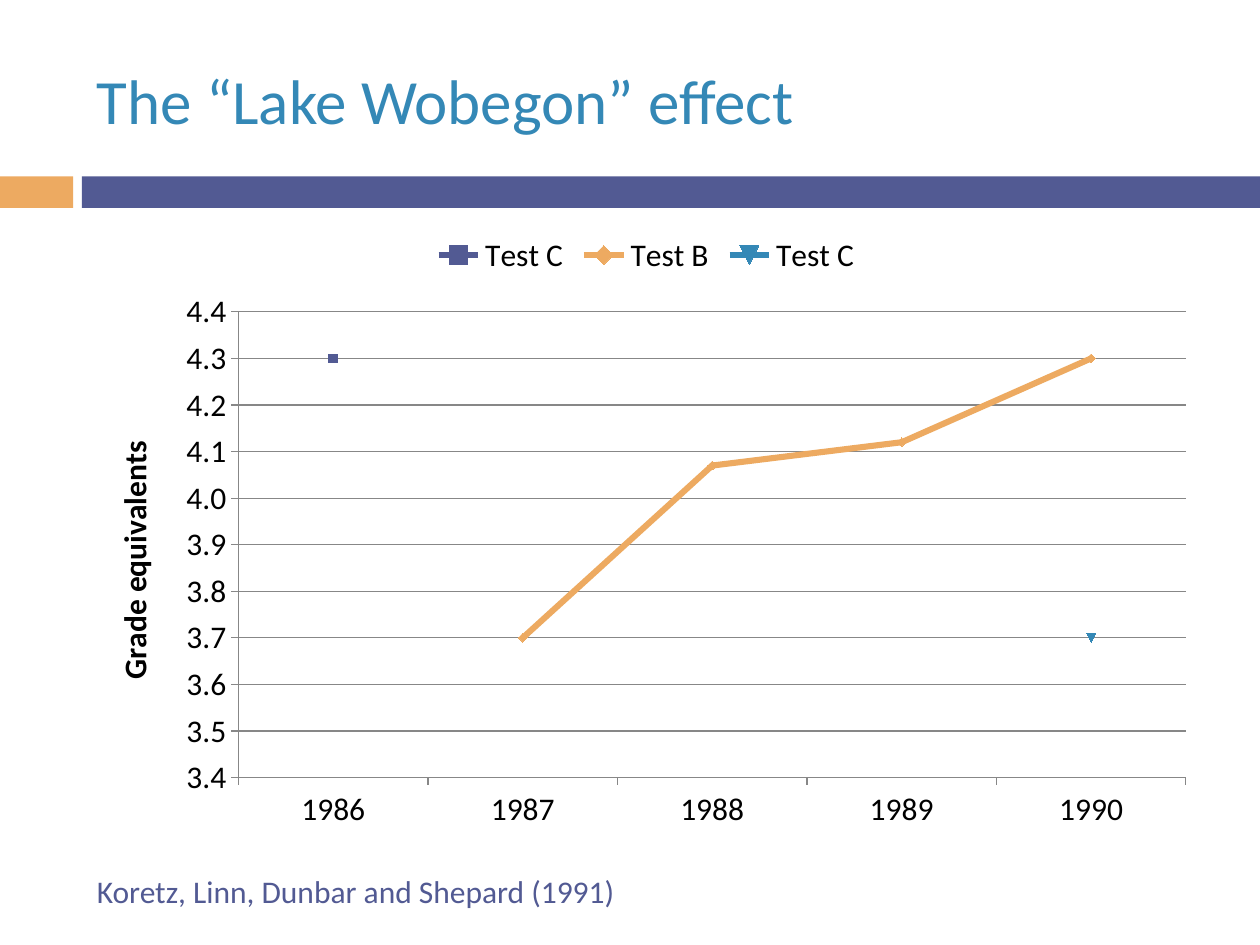
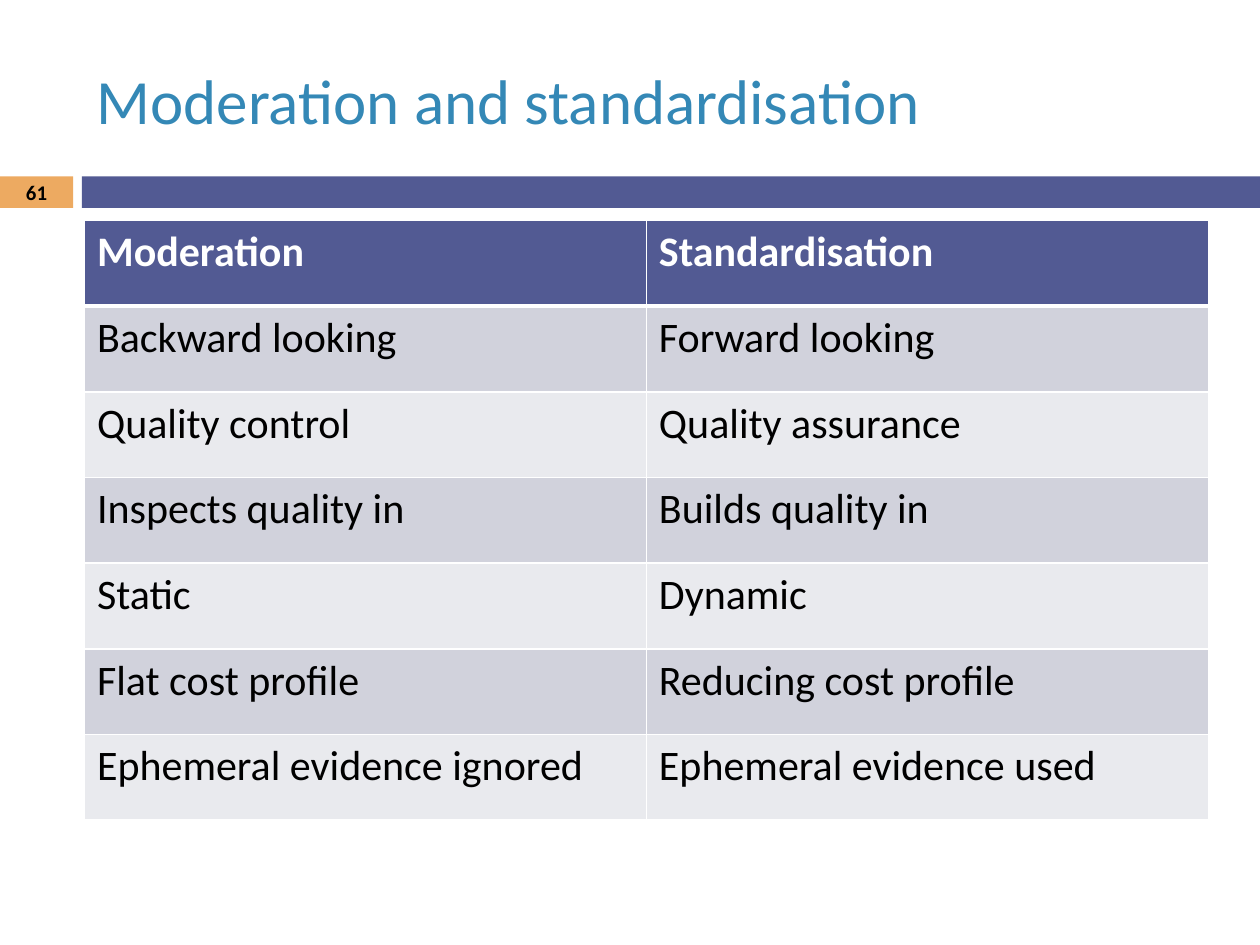
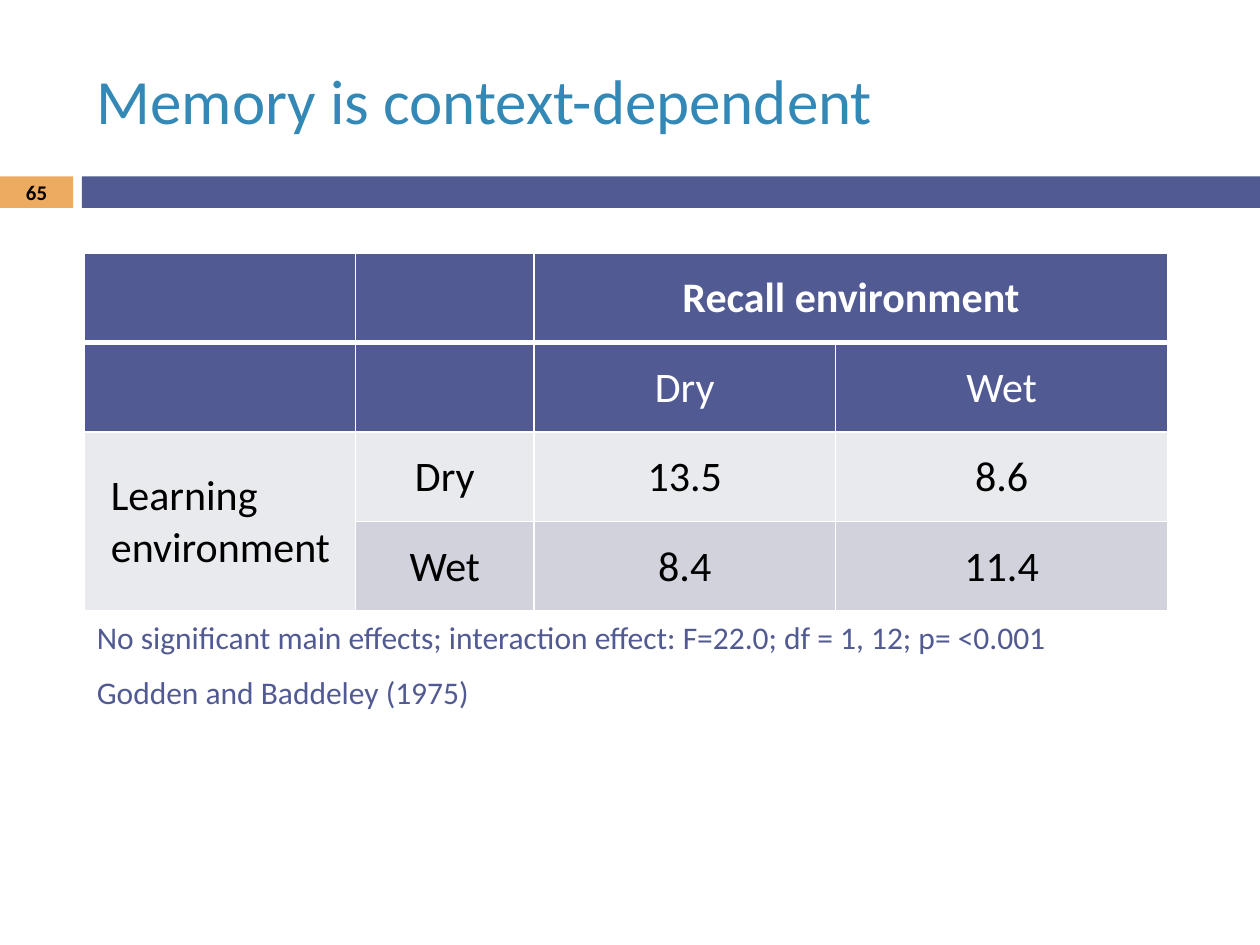
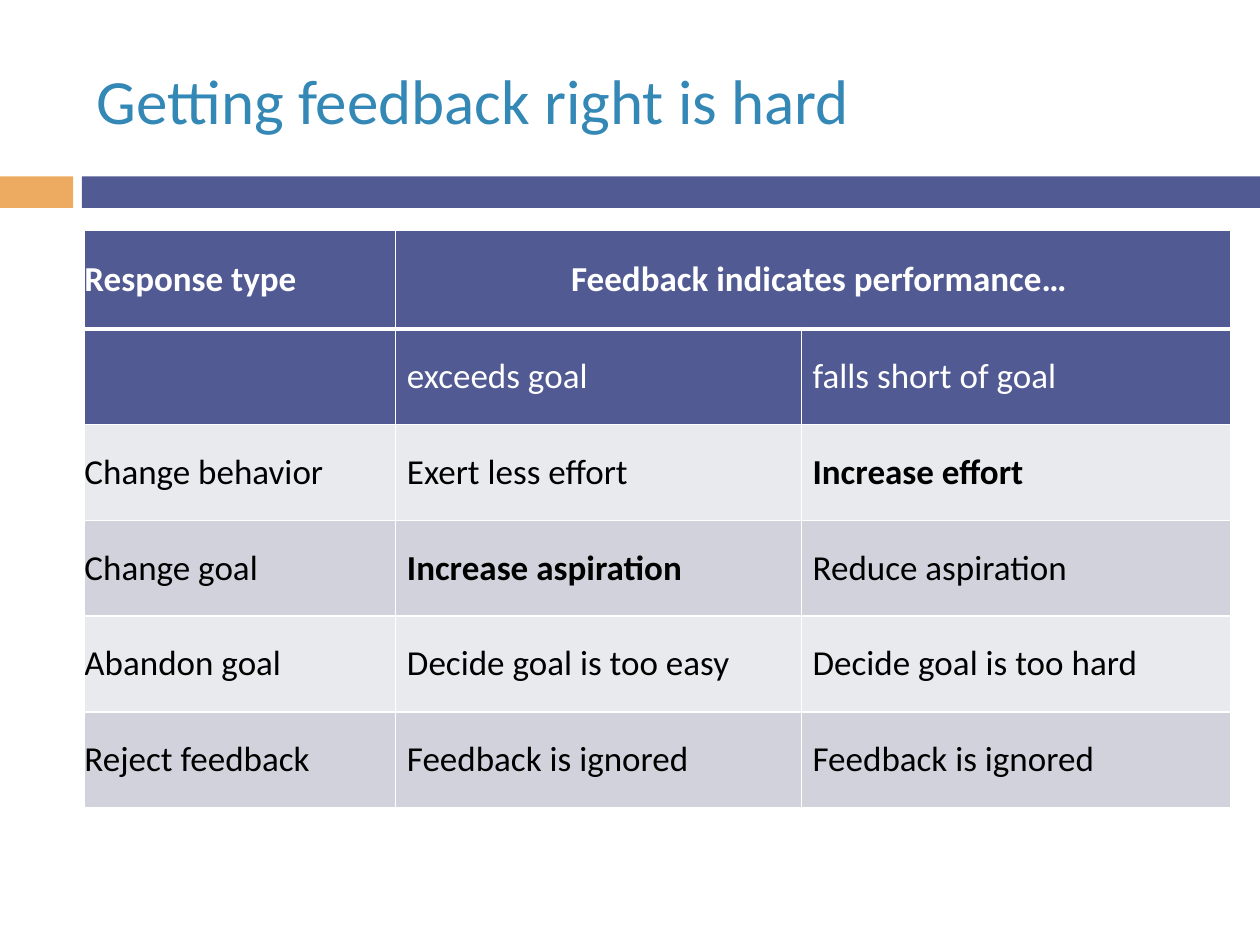
from dataclasses import dataclass

from lxml import etree
from pptx import Presentation
from pptx import util as u
from pptx.chart.data import CategoryChartData
from pptx.dml.color import RGBColor
from pptx.enum import chart as charts
from pptx.enum import shapes, text
from pptx.oxml.ns import qn
from pptx.slide import Slide
from pptx.table import _Cell
from pptx.text.text import TextFrame

PX = 9144  # 100 px to the inch
FONT = "Calibri"
COLOURS = {
    "title": "3488B6",
    "band": "525A93",
    "accent": "EDAA61",
    "odd_row": "D1D2DC",
    "even_row": "E9EAEE",
    "grid": "878787",
    "black": "000000",
    "white": "FFFFFF",
}
LEFT, CONTENT_WIDTH = 67, 892


@dataclass(frozen=True)
class Box:
    left: int
    top: int
    width: int
    height: int

    def emu(self) -> tuple[int, ...]:
        return tuple(px(side) for side in (self.left, self.top, self.width, self.height))


@dataclass(frozen=True)
class Band:
    box: Box
    colour: str


@dataclass(frozen=True)
class Grid:
    """A table; spans hold the first and last (row, column) of merged cells."""
    top: int
    widths: tuple[int, ...]
    heights: tuple[int, ...]
    rows: tuple[tuple[str, ...], ...]
    size: int = 24
    head_rows: int = 1
    spans: tuple = ()
    indents: tuple[int, ...] = (0, 0, 0, 0)
    centred_columns: tuple[int, ...] = ()
    strong: tuple[str, ...] = ()
    inset: int | None = None
    space_after: int = 0


@dataclass(frozen=True)
class Trend:
    name: str
    scores: tuple
    colour: str


BANDS = (
    Band(Box(0, 140, 58, 25), "accent"),
    Band(Box(65, 140, 935, 25), "band"),
)
TITLE_BOX = Box(LEFT, 25, CONTENT_WIDTH, 108)
NUMBER_BOX = Box(0, 139, 58, 27)

YEARS = ("1986", "1987", "1988", "1989", "1990")
TRENDS = (
    Trend("Test C", (4.3, None, None, None, None), "band"),
    Trend("Test B", (None, 3.7, 4.07, 4.12, 4.3), "accent"),
    Trend("Test C", (None, None, None, None, 3.7), "title"),
)

MODERATION = Grid(
    top=175,
    widths=(446, 446),
    heights=(68,) * 7,
    rows=(
        ("Moderation", "Standardisation"),
        ("Backward looking", "Forward looking"),
        ("Quality control", "Quality assurance"),
        ("Inspects quality in", "Builds quality in"),
        ("Static", "Dynamic"),
        ("Flat cost profile", "Reducing cost profile"),
        ("Ephemeral evidence ignored", "Ephemeral evidence used"),
    ),
)
RECALL = Grid(
    top=201,
    widths=(215, 142, 239, 264),
    heights=(71,) * 4,
    rows=(
        ("", "", "Recall environment", ""),
        ("", "", "Dry", "Wet"),
        ("Learning\nenvironment", "Dry", "13.5", "8.6"),
        ("", "Wet", "8.4", "11.4"),
    ),
    head_rows=2,
    spans=(((0, 2), (0, 3)), ((2, 0), (3, 0))),
    indents=(20, 0, 0, 0),
    centred_columns=(1, 2, 3),
    inset=1,
)
FEEDBACK = Grid(
    top=183,
    widths=(247, 322, 341),
    heights=(78,) + (76,) * 5,
    rows=(
        ("Response type", "Feedback indicates performance…", ""),
        ("", "exceeds goal", "falls short of goal"),
        ("Change behavior", "Exert less effort", "Increase effort"),
        ("Change goal", "Increase aspiration", "Reduce aspiration"),
        ("Abandon goal", "Decide goal is too easy", "Decide goal is too hard"),
        ("Reject feedback", "Feedback is ignored", "Feedback is ignored"),
    ),
    size=20,
    head_rows=2,
    spans=(((0, 1), (0, 2)),),
    indents=(0, 9, 9),
    strong=("Increase effort", "Increase aspiration"),
    inset=0,
    space_after=4,
)


def px(length: int) -> int:
    return u.Emu(length * PX)


def rgb(colour: str) -> RGBColor:
    return RGBColor.from_string(COLOURS[colour])


def write(frame: TextFrame, words: str, *, size: float, colour: str = "black",
          bold: bool = False, centred: bool = False, indent: int = 0,
          space_after: int = 0) -> None:
    """Fill a frame with one paragraph for each line of words."""
    for index, line in enumerate(words.split("\n")):
        paragraph = frame.add_paragraph() if index else frame.paragraphs[0]
        paragraph.alignment = text.PP_ALIGN.CENTER if centred else text.PP_ALIGN.LEFT
        if indent:
            paragraph._p.get_or_add_pPr().set("marL", str(px(indent)))
        if space_after:
            paragraph.space_after = u.Pt(space_after)
        run = paragraph.add_run()
        run.text = line
        run.font.name = FONT
        run.font.size = u.Pt(size)
        run.font.bold = bold
        run.font.color.rgb = rgb(colour)


def add_text(slide: Slide, box: Box, words: str, *, middle: bool = False,
             **style) -> None:
    frame = slide.shapes.add_textbox(*box.emu()).text_frame
    frame.word_wrap = True
    frame.vertical_anchor = text.MSO_ANCHOR.MIDDLE if middle else text.MSO_ANCHOR.TOP
    write(frame, words, **style)


def add_note(slide: Slide, top: int, width: int, words: str) -> None:
    add_text(slide, Box(LEFT, top, width, 40), words, size=18, colour="band")


def add_slide(deck, title: str, number: str = "") -> Slide:
    slide = deck.slides.add_slide(deck.slide_layouts[6])
    for band in BANDS:
        bar = slide.shapes.add_shape(shapes.MSO_SHAPE.RECTANGLE, *band.box.emu())
        bar.shadow.inherit = False
        bar.fill.solid()
        bar.fill.fore_color.rgb = rgb(band.colour)
        bar.line.fill.background()
    add_text(slide, TITLE_BOX, title, middle=True, size=36, colour="title")
    if number:
        add_text(slide, NUMBER_BOX, number, middle=True, size=11.9, bold=True,
                 centred=True)
    return slide


def rule_cell(cell: _Cell, row: int) -> None:
    """Draw white cell borders, with a heavy rule under the first row."""
    points = {"L": 1, "R": 1, "T": 3 if row == 1 else 1, "B": 3 if row == 0 else 1}
    properties = cell._tc.get_or_add_tcPr()
    for side, width in points.items():
        line = etree.SubElement(properties, qn(f"a:ln{side}"), w=str(u.Pt(width)))
        fill = etree.SubElement(line, qn("a:solidFill"))
        etree.SubElement(fill, qn("a:srgbClr"), val=COLOURS["white"])


def add_grid(slide: Slide, grid: Grid) -> None:
    box = Box(LEFT, grid.top, sum(grid.widths), sum(grid.heights))
    table = slide.shapes.add_table(len(grid.heights), len(grid.widths), *box.emu()).table
    for column, width in zip(table.columns, grid.widths):
        column.width = px(width)
    for row, height in zip(table.rows, grid.heights):
        row.height = px(height)
    for first, last in grid.spans:
        table.cell(*first).merge(table.cell(*last))
    for r, row in enumerate(grid.rows):
        in_head = r < grid.head_rows
        fill = "band" if in_head else ("odd_row" if r % 2 else "even_row")
        for c, words in enumerate(row):
            cell = table.cell(r, c)
            rule_cell(cell, r)
            cell.fill.solid()
            cell.fill.fore_color.rgb = rgb(fill)
            if not words:
                continue
            if grid.inset is not None:
                cell.vertical_anchor = text.MSO_ANCHOR.MIDDLE
                cell.margin_left = cell.margin_right = px(grid.inset)
                cell.margin_top, cell.margin_bottom = px(grid.inset), 0
            write(cell.text_frame, words, size=grid.size,
                  colour="white" if in_head else "black",
                  bold=r == 0 or words in grid.strong,
                  centred=c in grid.centred_columns or cell.span_width > 1,
                  indent=grid.indents[c], space_after=grid.space_after)


def add_trends(slide: Slide, box: Box) -> None:
    scores = CategoryChartData(number_format="#,##0.0")
    scores.categories = YEARS
    for trend in TRENDS:
        scores.add_series(trend.name, trend.scores)
    chart = slide.shapes.add_chart(charts.XL_CHART_TYPE.LINE_MARKERS, *box.emu(),
                                   scores).chart
    chart.font.name = FONT
    chart.font.size = u.Pt(18)
    chart.font.color.rgb = rgb("black")
    chart.has_title = False
    chart.has_legend = True
    chart.legend.position = charts.XL_LEGEND_POSITION.TOP
    chart.legend.include_in_layout = False
    chart.plots[0].vary_by_categories = False

    for series, trend in zip(chart.plots[0].series, TRENDS):
        series.smooth = False
        series.format.line.width = u.Pt(3.5)
        series.format.line.color.rgb = rgb(trend.colour)
        series.marker.size = 5
        series.marker.format.fill.solid()
        series.marker.format.fill.fore_color.rgb = rgb(trend.colour)
        series.marker.format.line.color.rgb = rgb(trend.colour)

    grades = chart.value_axis
    grades.minimum_scale, grades.maximum_scale, grades.major_unit = 3.4, 4.4, 0.1
    grades.tick_labels.number_format = "#,##0.0"
    grades.tick_labels.number_format_is_linked = False
    grades.has_major_gridlines = True
    write(grades.axis_title.text_frame, "Grade equivalents", size=18, bold=True)
    for axis in (chart.category_axis, grades):
        axis.major_tick_mark = charts.XL_TICK_MARK.OUTSIDE
    for part in (chart.category_axis, grades, grades.major_gridlines):
        part.format.line.width = u.Pt(0.75)
        part.format.line.color.rgb = rgb("grid")


def main() -> None:
    deck = Presentation()
    deck.slide_width, deck.slide_height = px(1000), px(750)

    slide = add_slide(deck, "The “Lake Wobegon” effect")
    add_trends(slide, Box(LEFT, 175, CONTENT_WIDTH, 492))
    add_note(slide, 687, 475, "Koretz, Linn, Dunbar and Shepard (1991)")

    add_grid(add_slide(deck, "Moderation and standardisation", "61"), MODERATION)

    slide = add_slide(deck, "Memory is context-dependent", "65")
    add_grid(slide, RECALL)
    add_note(slide, 529, 529, "Godden and Baddeley (1975)")
    add_note(slide, 486, CONTENT_WIDTH,
             "No significant main effects; interaction effect: "
             "F=22.0; df = 1, 12; p= <0.001")

    add_grid(add_slide(deck, "Getting feedback right is hard"), FEEDBACK)
    deck.save("out.pptx")


if __name__ == "__main__":
    main()
